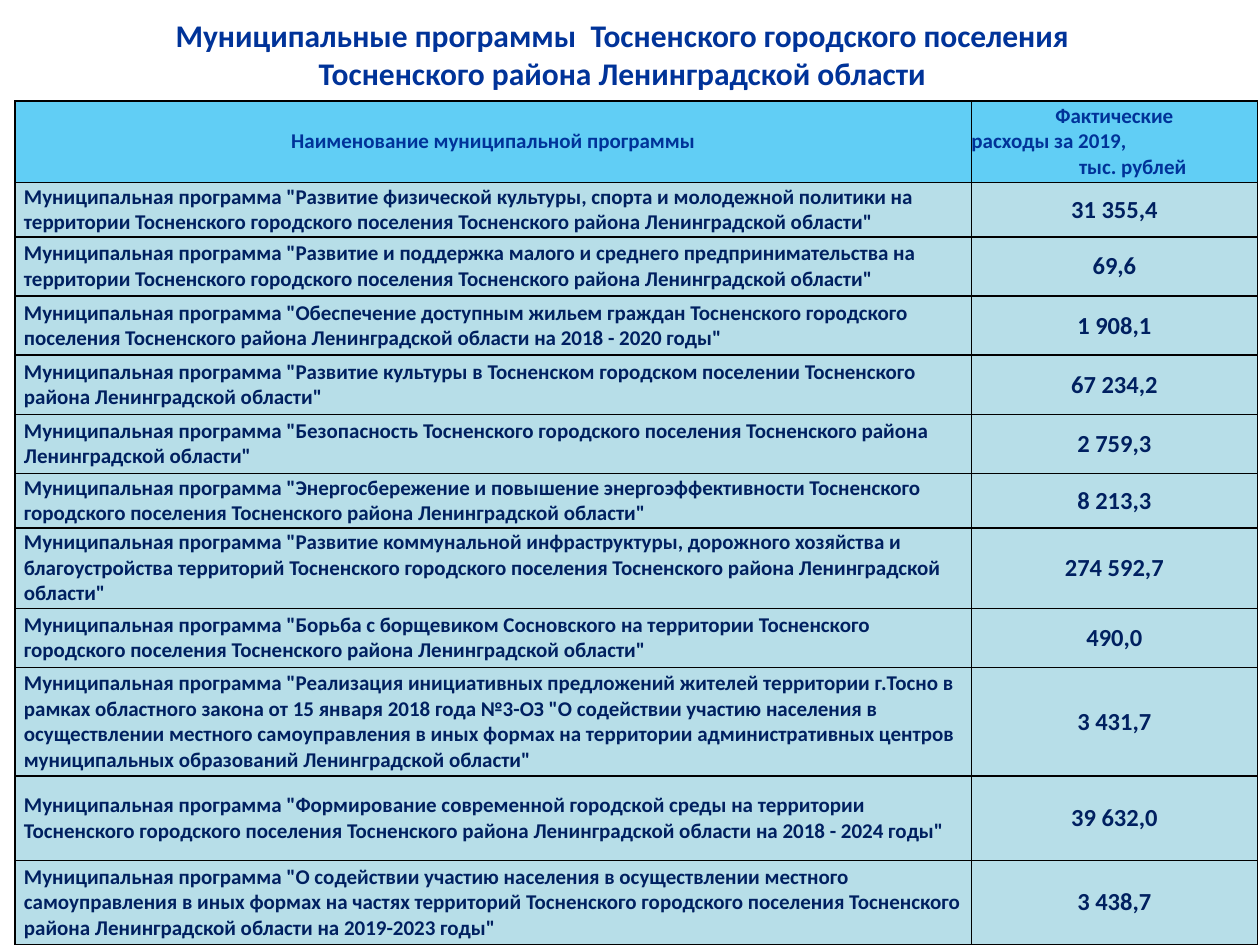
from dataclasses import dataclass

import pptx
import pptx.dml.color
import pptx.enum.text
import pptx.oxml
import pptx.oxml.ns
import pptx.util
from pptx.util import Inches

COLORS = {
    "title": "003399",
    "text": "002060",
    "header": "00B0F0",
    "body": "B7DEE8",
    "border": "000000",
}
FONT = "Calibri"
CENTER = pptx.enum.text.PP_ALIGN.CENTER
LEFT = pptx.enum.text.PP_ALIGN.LEFT
MIDDLE = pptx.enum.text.MSO_ANCHOR.MIDDLE


@dataclass
class Program:
    name: str
    spent: str
    height: float = 0.47

    @property
    def label(self) -> str:
        return f'Муниципальная программа "{self.name}"'


TITLE = ("Муниципальные программы  Тосненского городского поселения\n"
         "Тосненского района Ленинградской области")
HEADER_HEIGHT = 0.65
NAME_HEADER = "Наименование муниципальной программы"
SPENT_HEADER = "Фактические\nрасходы за 2019,\nтыс. рублей"
COLUMN_WIDTHS = (7.59, 2.27)
PLACE = "Тосненского городского поселения Тосненского района Ленинградской области"
PROGRAMS = [
    Program("Развитие физической культуры, спорта и молодежной политики "
            f"на территории {PLACE}", "31 355,4", 0.43),
    Program("Развитие и поддержка малого и среднего предпринимательства "
            f"на территории {PLACE}", "69,6"),
    Program(f"Обеспечение доступным жильем граждан {PLACE} на 2018 - 2020 годы",
            "1 908,1"),
    Program("Развитие культуры в Тосненском городском поселении "
            "Тосненского района Ленинградской области", "67 234,2"),
    Program(f"Безопасность {PLACE}", "2 759,3"),
    Program(f"Энергосбережение и повышение энергоэффективности {PLACE}",
            "8 213,3", 0.43),
    Program("Развитие коммунальной инфраструктуры, дорожного хозяйства "
            f"и благоустройства территорий {PLACE}", "274 592,7", 0.64),
    Program(f"Борьба с борщевиком Сосновского на территории {PLACE}", "490,0"),
    Program("Реализация инициативных предложений жителей территории г.Тосно "
            "в рамках областного закона от 15 января 2018 года №3-ОЗ "
            '"О содействии участию населения в осуществлении местного '
            "самоуправления в иных формах на территории административных "
            "центров муниципальных образований Ленинградской области",
            "3 431,7", 0.86),
    Program(f"Формирование современной городской среды на территории {PLACE} "
            "на 2018 - 2024 годы", "39 632,0", 0.67),
    Program("О содействии участию населения в осуществлении местного "
            "самоуправления в иных формах на частях территорий "
            f"{PLACE} на 2019-2023 годы", "3 438,7", 0.67),
]


def rgb(name: str) -> pptx.dml.color.RGBColor:
    return pptx.dml.color.RGBColor.from_string(COLORS[name])


def format_text(tf, size: float, color: str, align) -> None:
    for p in tf.paragraphs:
        p.alignment = align
        for r in p.runs:
            r.font.name = FONT
            r.font.size = pptx.util.Pt(size)
            r.font.bold = True
            r.font.color.rgb = rgb(color)


def add_borders(cell) -> None:
    tc_pr = cell._tc.get_or_add_tcPr()
    for side in ("lnL", "lnR", "lnT", "lnB"):
        tc_pr.append(pptx.oxml.parse_xml(
            f'<a:{side} {pptx.oxml.ns.nsdecls("a")} w="12700"><a:solidFill>'
            f'<a:srgbClr val="{COLORS["border"]}"/></a:solidFill></a:{side}>'))


def fill_cell(cell, text: str, size: float, color: str, fill: str,
              align, margin: float) -> None:
    add_borders(cell)
    cell.fill.solid()
    cell.fill.fore_color.rgb = rgb(fill)
    cell.vertical_anchor = MIDDLE
    cell.margin_left = cell.margin_right = Inches(margin)
    cell.margin_top = cell.margin_bottom = 0
    cell.text_frame.text = text
    format_text(cell.text_frame, size, color, align)


def set_fill_opacity(cell, percent: int) -> None:
    clr = cell._tc.tcPr.find(pptx.oxml.ns.qn("a:solidFill"))[0]
    clr.append(pptx.oxml.parse_xml(
        f'<a:alpha {pptx.oxml.ns.nsdecls("a")} val="{percent * 1000}"/>'))


def add_title(s) -> None:
    sp = s.shapes.title
    sp.left, sp.top = Inches(0), Inches(0.05)
    sp.width, sp.height = Inches(9.88), Inches(0.76)
    tf = sp.text_frame
    tf.text = TITLE
    tf.word_wrap = True
    tf.auto_size = pptx.enum.text.MSO_AUTO_SIZE.NONE
    tf.vertical_anchor = MIDDLE
    format_text(tf, 18, "title", CENTER)


def add_program_table(s) -> None:
    heights = [HEADER_HEIGHT] + [program.height for program in PROGRAMS]
    table = s.shapes.add_table(
        len(heights), len(COLUMN_WIDTHS), Inches(0.12), Inches(0.8),
        Inches(sum(COLUMN_WIDTHS)), Inches(sum(heights))).table
    for column, width in zip(table.columns, COLUMN_WIDTHS):
        column.width = Inches(width)
    for row, height in zip(table.rows, heights):
        row.height = Inches(height)

    # Header row
    for cell, text in zip(table.rows[0].cells, (NAME_HEADER, SPENT_HEADER)):
        fill_cell(cell, text, 12, "title", "header", CENTER, 0)
        set_fill_opacity(cell, 62)
    _, expenses, unit = table.cell(0, 1).text_frame.paragraphs
    expenses.alignment = LEFT
    unit._p.get_or_add_pPr().set("marL", str(Inches(0.29)))

    # One row per programme
    for i, program in enumerate(PROGRAMS, start=1):
        fill_cell(table.cell(i, 0), program.label, 12, "text", "body", LEFT, 0.07)
        fill_cell(table.cell(i, 1), program.spent, 14, "text", "body", CENTER, 0.07)


def main() -> None:
    prs = pptx.Presentation()
    prs.slide_width, prs.slide_height = Inches(10), Inches(7.5)
    s = prs.slides.add_slide(prs.slide_layouts.get_by_name("Title Only"))
    add_title(s)
    add_program_table(s)
    prs.save("out.pptx")


if __name__ == "__main__":
    main()
